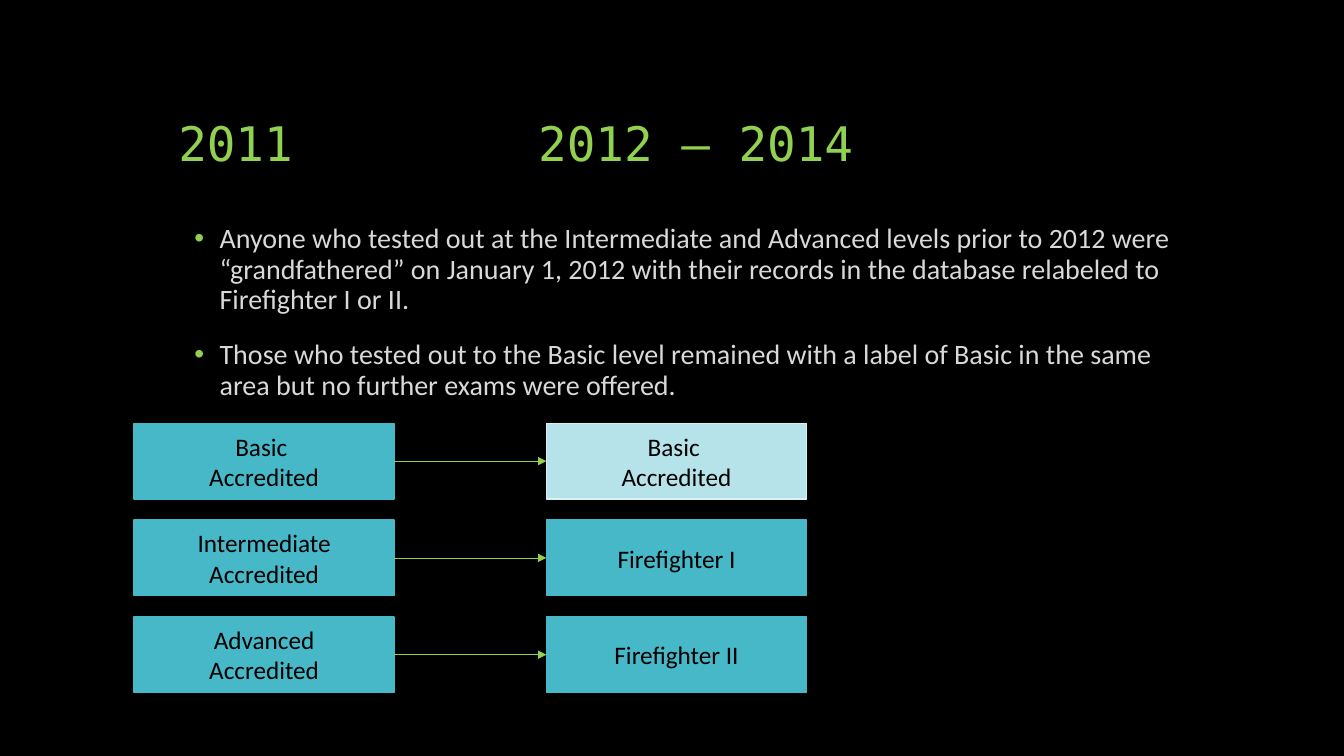
from dataclasses import dataclass

from lxml.etree import SubElement
from pptx import Presentation
from pptx.dml.color import RGBColor
from pptx.enum.shapes import MSO_CONNECTOR, MSO_SHAPE
from pptx.enum.text import MSO_ANCHOR, PP_ALIGN
from pptx.oxml.ns import qn
from pptx.util import Inches, Pt


@dataclass(frozen=True)
class Theme:
    background: str = "000000"
    accent: str = "92D050"
    body: str = "D9D9D9"
    box: str = "47B8C7"
    box_text: str = "000000"
    pale_box: str = "B5E3E9"
    pale_line: str = "DAF1F4"
    title_font: str = "DejaVu Sans Mono"
    body_font: str = "Calibri"
    title_size: int = 34
    body_size: int = 20
    box_size: int = 18


THEME = Theme()

TITLE = "2011\t2012 – 2014"
POINTS = [
    "Anyone who tested out at the Intermediate and Advanced levels prior to 2012 were "
    "“grandfathered” on January 1, 2012 with their records in the database relabeled to "
    "Firefighter I or II.",
    "Those who tested out to the Basic level remained with a label of Basic in the same "
    "area but no further exams were offered.",
]
# Level in 2011, level from 2012, whether the new level is shown pale
LEVELS = [
    (["Basic ", "Accredited"], ["Basic ", "Accredited"], True),
    (["Intermediate", "Accredited"], ["Firefighter I"], False),
    (["Advanced", "Accredited"], ["Firefighter II"], False),
]


def color(value):
    return RGBColor.from_string(value)


def write(tf, lines, *, size, fill, font=THEME.body_font, align=PP_ALIGN.LEFT,
          anchor=MSO_ANCHOR.TOP, spacing=None, before=0):
    """Write one paragraph per line and return the paragraphs."""
    tf.word_wrap = True
    tf.vertical_anchor = anchor
    for i, line in enumerate(lines):
        p = tf.paragraphs[0] if i == 0 else tf.add_paragraph()
        p.alignment = align
        p.line_spacing = spacing
        p.space_before = Pt(before)
        r = p.add_run()
        r.text = line
        r.font.name = font
        r.font.size = Pt(size)
        r.font.color.rgb = color(fill)
    return tf.paragraphs


def add_textbox(slide, box):
    return slide.shapes.add_textbox(*map(Inches, box)).text_frame


def add_title(slide, box, tab):
    paragraphs = write(add_textbox(slide, box), [TITLE], size=THEME.title_size,
                       fill=THEME.accent, font=THEME.title_font,
                       anchor=MSO_ANCHOR.BOTTOM, spacing=0.9)
    tabs = SubElement(paragraphs[0]._p.get_or_add_pPr(), qn("a:tabLst"))
    SubElement(tabs, qn("a:tab"), pos=str(Inches(tab)), algn="l")


def add_points(slide, box):
    paragraphs = write(add_textbox(slide, box), POINTS, size=THEME.body_size,
                       fill=THEME.body, spacing=0.9, before=18)
    indent = Inches(0.25)
    for p in paragraphs:
        pPr = p._p.get_or_add_pPr()
        pPr.set("marL", str(indent))
        pPr.set("indent", str(-indent))
        SubElement(SubElement(pPr, qn("a:buClr")), qn("a:srgbClr"), val=THEME.accent)
        SubElement(pPr, qn("a:buFont"), typeface="Arial")
        SubElement(pPr, qn("a:buChar"), char="•")


def add_level(slide, box, lines, pale=False):
    sp = slide.shapes.add_shape(MSO_SHAPE.RECTANGLE, *map(Inches, box))
    sp.shadow.inherit = False
    sp.fill.solid()
    sp.fill.fore_color.rgb = color(THEME.pale_box if pale else THEME.box)
    sp.line.color.rgb = color(THEME.pale_line if pale else THEME.box)
    sp.line.width = Pt(1)
    write(sp.text_frame, lines, size=THEME.box_size, fill=THEME.box_text,
          align=PP_ALIGN.CENTER, anchor=MSO_ANCHOR.MIDDLE)
    return sp


def add_arrow(slide, start, end):
    """Join the right side of one rectangle to the left side of another."""
    cxn = slide.shapes.add_connector(MSO_CONNECTOR.STRAIGHT, 0, 0, 0, 0)
    cxn.begin_connect(start, 3)
    cxn.end_connect(end, 1)
    cxn.line.color.rgb = color(THEME.accent)
    cxn.line.width = Pt(0.5)
    SubElement(cxn.line._get_or_add_ln(), qn("a:tailEnd"), type="triangle")
    SubElement(cxn._element.spPr, qn("a:effectLst"))


def add_level_map(slide, box):
    """Pair each old level with its new one, a row for each."""
    left, top, width, height = box
    level_w, level_h = 2.58, 0.75
    pitch = (height - level_h) / (len(LEVELS) - 1)
    for i, (old, new, pale) in enumerate(LEVELS):
        y = top + i * pitch
        start = add_level(slide, (left, y, level_w, level_h), old)
        end = add_level(slide, (left + width - level_w, y, level_w, level_h), new, pale)
        add_arrow(slide, start, end)


def main():
    prs = Presentation()
    prs.slide_width, prs.slide_height = Inches(13.33), Inches(7.5)
    slide = prs.slides.add_slide(prs.slide_layouts[6])
    slide.background.fill.solid()
    slide.background.fill.fore_color.rgb = color(THEME.background)
    add_title(slide, (1.67, 0.5, 10, 1.25), tab=3.57)
    add_points(slide, (1.83, 2.18, 10, 2.02))
    add_level_map(slide, (1.33, 4.2, 6.67, 2.67))
    prs.save("out.pptx")


if __name__ == "__main__":
    main()
